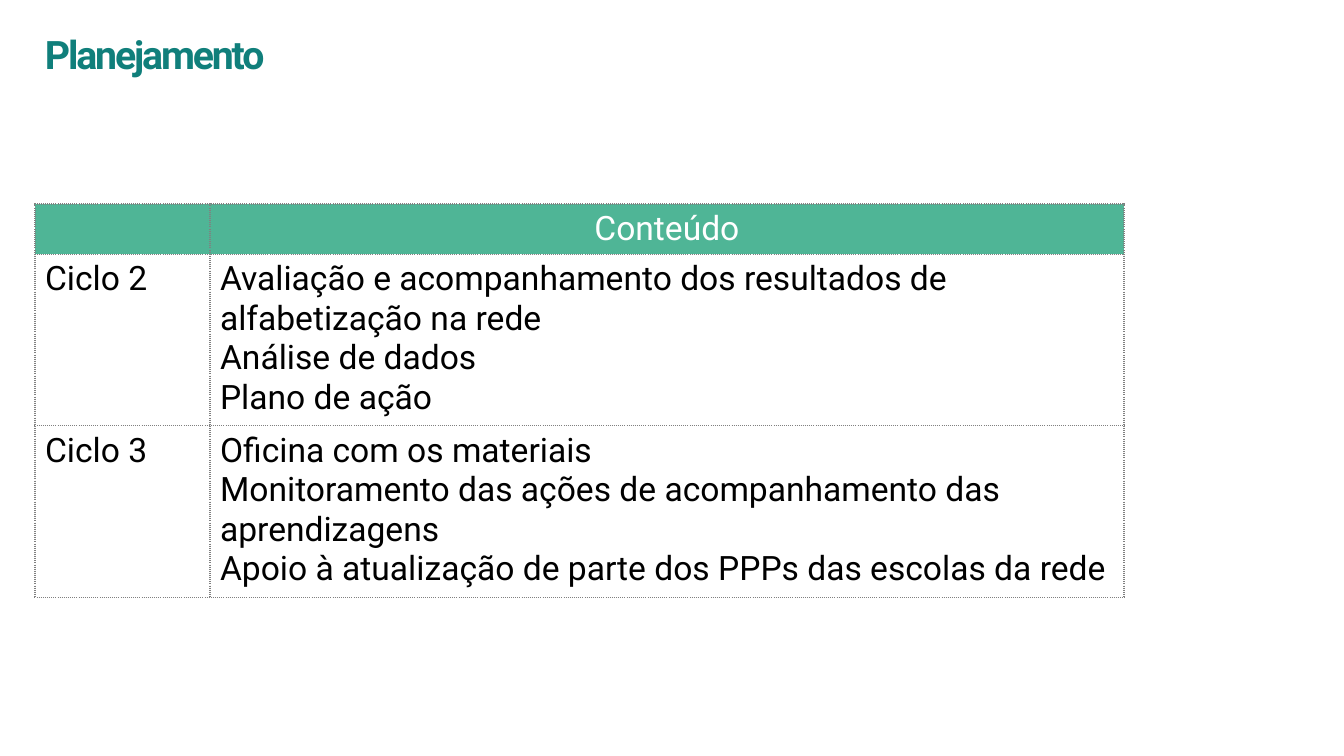
from lxml.etree import SubElement
from pptx import Presentation
from pptx.dml.color import RGBColor
from pptx.enum.text import PP_ALIGN as Align
from pptx.oxml.ns import qn
from pptx.util import Emu, Pt

TITLE = "Planejamento"
ROWS = [
    ("", ["Conteúdo"]),
    ("Ciclo 2", [
        "Avaliação e acompanhamento dos resultados de alfabetização na rede",
        "Análise de dados",
        "Plano de ação",
    ]),
    ("Ciclo 3", [
        "Oficina com os materiais",
        "Monitoramento das ações de acompanhamento das aprendizagens",
        "Apoio à atualização de parte dos PPPs das escolas da rede",
    ]),
]
COLORS = {"title": "107F7B", "header": "4FB596", "header_text": "FFFFFF",
          "text": "000000", "border": "808080"}
FONT = "Roboto"
SLIDE_SIZE = (1344, 756)
TITLE_BOX = (35, 25, 1233, 126)
TABLE_LEFT, TABLE_TOP = 35, 204
COLUMN_WIDTHS = (175, 914)
ROW_HEIGHTS = (49, 168, 168)


def px(length):
    return Emu(round(length * 914400 / 100.8))


def style_paragraph(paragraph, size, color, bold=False):
    font = paragraph.font
    font.name = FONT
    font.size = Pt(size)
    font.bold = bold
    font.color.rgb = RGBColor.from_string(COLORS[color])


def add_borders(cell):
    properties = cell._tc.get_or_add_tcPr()
    for side in ("a:lnL", "a:lnR", "a:lnT", "a:lnB"):
        line = SubElement(properties, qn(side), w=str(Pt(1)))
        fill = SubElement(line, qn("a:solidFill"))
        SubElement(fill, qn("a:srgbClr"), val=COLORS["border"])
        SubElement(line, qn("a:prstDash"), val="sysDot")


def add_title(slide):
    frame = slide.shapes.add_textbox(*map(px, TITLE_BOX)).text_frame
    frame.word_wrap = True
    paragraph = frame.paragraphs[0]
    run = paragraph.add_run()
    run.text = TITLE
    run._r.get_or_add_rPr().set("spc", "-150")
    style_paragraph(paragraph, 28, "title", bold=True)


def fill_cell(cell, lines, is_header):
    add_borders(cell)
    if is_header:
        cell.fill.solid()
        cell.fill.fore_color.rgb = RGBColor.from_string(COLORS["header"])
    else:
        cell.fill.background()
    cell.text_frame.text = "\n".join(lines)
    for paragraph in cell.text_frame.paragraphs:
        paragraph.alignment = Align.CENTER if is_header else Align.LEFT
        style_paragraph(paragraph, 24, "header_text" if is_header else "text")


def add_plan_table(slide):
    table = slide.shapes.add_table(
        len(ROWS), len(COLUMN_WIDTHS), px(TABLE_LEFT), px(TABLE_TOP),
        px(sum(COLUMN_WIDTHS)), px(sum(ROW_HEIGHTS))).table
    table.first_row = table.horz_banding = False
    for column, width in zip(table.columns, COLUMN_WIDTHS):
        column.width = px(width)
    for index, (cycle, contents) in enumerate(ROWS):
        table.rows[index].height = px(ROW_HEIGHTS[index])
        fill_cell(table.cell(index, 0), [cycle], index == 0)
        fill_cell(table.cell(index, 1), contents, index == 0)


def main():
    presentation = Presentation()
    presentation.slide_width, presentation.slide_height = map(px, SLIDE_SIZE)
    slide = presentation.slides.add_slide(presentation.slide_layouts[6])
    add_title(slide)
    add_plan_table(slide)
    presentation.save("out.pptx")


if __name__ == "__main__":
    main()
